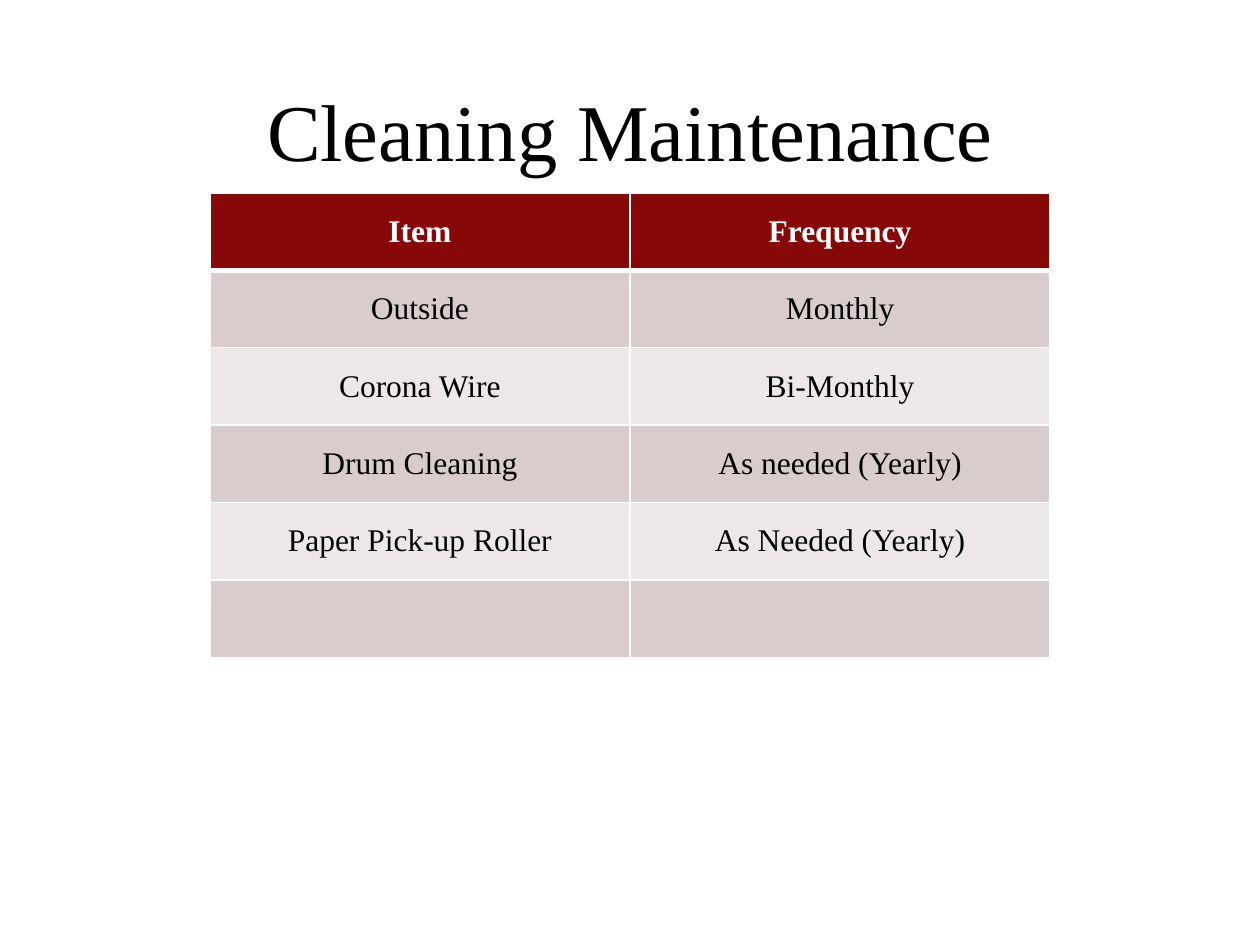
from lxml import etree
from pptx import Presentation
from pptx.dml.color import RGBColor
from pptx.enum.text import MSO_ANCHOR, PP_ALIGN
from pptx.oxml.ns import qn
from pptx.util import Cm, Pt

MIDDLE = MSO_ANCHOR.MIDDLE
CENTER = PP_ALIGN.CENTER

THEME = {
    "font": "Times New Roman",
    "title": 46, "body": 18,
    "ink": "000000", "paper": "FFFFFF", "head": "860908",
    "bands": ("EDE7E7", "D9CCCC"),
}


def write(frame, text, size, color, bold=False):
    """Put one centred run into a text frame."""
    para = frame.paragraphs[0]
    para.alignment = CENTER
    run = para.add_run()
    run.text = text
    run.font.name = THEME["font"]
    run.font.size = Pt(size)
    run.font.bold = bold
    run.font.color.rgb = RGBColor.from_string(color)


def edge(cell, side, width):
    """Draw one solid border of a cell."""
    line = etree.SubElement(cell._tc.get_or_add_tcPr(), qn(f"a:ln{side}"),
                            w=str(Pt(width)))
    fill = etree.SubElement(line, qn("a:solidFill"))
    etree.SubElement(fill, qn("a:srgbClr"), val=THEME["paper"])


deck = Presentation()
deck.slide_width, deck.slide_height = Cm(25.4), Cm(19.05)
slide = deck.slides.add_slide(deck.slide_layouts[6])

# Title
title = slide.shapes.add_textbox(Cm(2.54), Cm(1.4), Cm(20.32), Cm(2.41))
title.text_frame.word_wrap = True
title.text_frame.vertical_anchor = MIDDLE
write(title.text_frame, "Cleaning Maintenance", THEME["title"], THEME["ink"])

# Cleaning schedule, with a spare row at the end
rows = [
    ("Item", "Frequency"),
    ("Outside", "Monthly"),
    ("Corona Wire", "Bi-Monthly"),
    ("Drum Cleaning", "As needed (Yearly)"),
    ("Paper Pick-up Roller", "As Needed (Yearly)"),
    ("", ""),
]
high = Cm(1.56)
table = slide.shapes.add_table(len(rows), 2, Cm(4.23), Cm(3.89),
                               Cm(16.94), high * len(rows)).table
for r, row in enumerate(rows):
    table.rows[r].height = high
    head = r == 0
    for c, text in enumerate(row):
        cell = table.cell(r, c)
        cell.vertical_anchor = MIDDLE
        # Borders, with a heavier rule under the header
        for side in "LRTB":
            heavy = (r, side) in ((0, "B"), (1, "T"))
            edge(cell, side, 3 if heavy else 1)
        cell.fill.solid()
        cell.fill.fore_color.rgb = RGBColor.from_string(
            THEME["head"] if head else THEME["bands"][r % 2])
        if text:
            write(cell.text_frame, text, THEME["body"],
                  THEME["paper"] if head else THEME["ink"], head)

deck.save("out.pptx")
